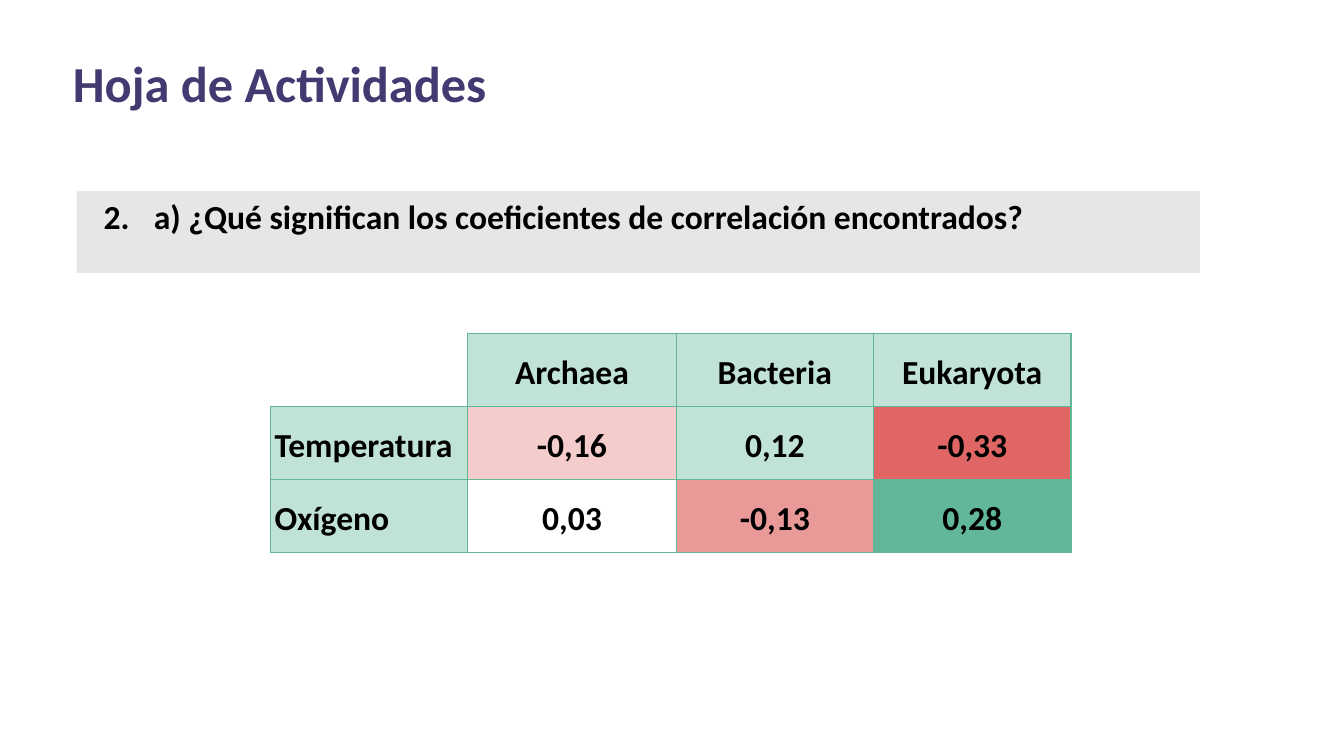
from lxml import etree
from pptx import Presentation
from pptx.dml.color import RGBColor
from pptx.enum.shapes import MSO_SHAPE
from pptx.enum.text import MSO_ANCHOR, MSO_AUTO_SIZE, PP_ALIGN
from pptx.oxml.ns import qn
from pptx.util import Cm, Pt

RECT = MSO_SHAPE.RECTANGLE
TOP, BOTTOM = MSO_ANCHOR.TOP, MSO_ANCHOR.BOTTOM
LEFT, CENTER, JUSTIFY = PP_ALIGN.LEFT, PP_ALIGN.CENTER, PP_ALIGN.JUSTIFY
GROW = MSO_AUTO_SIZE.SHAPE_TO_FIT_TEXT

FONT = "Calibri"
BLACK, WHITE, PURPLE, GREY = "000000", "FFFFFF", "423B71", "E7E6E6"
MINT, GREEN = "C0E2D7", "62B799"
PINK, ROSE, RED = "F4CCCC", "EA9999", "E06666"

COLUMN_WIDTHS = [3.73, 3.94, 3.73, 3.73]
CORRELATIONS = [
    [("", None), ("Archaea", MINT), ("Bacteria", MINT), ("Eukaryota", MINT)],
    [("Temperatura", MINT), ("-0,16", PINK), ("0,12", MINT), ("-0,33", RED)],
    [("Oxígeno", MINT), ("0,03", None), ("-0,13", ROSE), ("0,28", GREEN)],
]


def rgb(value):
    return RGBColor.from_string(value)


def add_run(p, text, size, color):
    r = p.add_run()
    r.text = text
    r.font.name = FONT
    r.font.size = Pt(size)
    r.font.bold = True
    r.font.color.rgb = rgb(color)


def set_frame(tf):
    tf.word_wrap = True
    tf.vertical_anchor = TOP
    tf.margin_left = tf.margin_right = Cm(0.19)
    tf.margin_top = tf.margin_bottom = Cm(0.1)


def number_paragraph(p, start, margin, indent):
    pPr = p._p.get_or_add_pPr()
    pPr.set("marL", str(Cm(margin)))
    pPr.set("indent", str(Cm(indent)))
    color = etree.SubElement(pPr, qn("a:buClr"))
    etree.SubElement(color, qn("a:srgbClr"), val=BLACK)
    etree.SubElement(pPr, qn("a:buFont"), typeface=FONT)
    etree.SubElement(pPr, qn("a:buAutoNum"), type="arabicPeriod", startAt=str(start))


def set_borders(cell, outer):
    tcPr = cell._tc.get_or_add_tcPr()
    sides = {"a:lnL": outer, "a:lnR": GREEN, "a:lnT": outer, "a:lnB": GREEN}
    for i, (tag, color) in enumerate(sides.items()):
        ln = etree.Element(qn(tag), w=str(Pt(0.75)))
        fill = etree.SubElement(ln, qn("a:solidFill"))
        etree.SubElement(fill, qn("a:srgbClr"), val=color)
        tcPr.insert(i, ln)


def add_title(s, x, y, w, h):
    sp = s.shapes.add_textbox(Cm(x), Cm(y), Cm(w), Cm(h))
    tf = sp.text_frame
    set_frame(tf)
    tf.auto_size = GROW
    add_run(tf.paragraphs[0], "Hoja de Actividades", 27, PURPLE)


def add_question(s, x, y, w, h):
    sp = s.shapes.add_shape(RECT, Cm(x), Cm(y), Cm(w), Cm(h))
    sp.shadow.inherit = False
    sp.fill.solid()
    sp.fill.fore_color.rgb = rgb(GREY)
    sp.line.fill.background()
    set_frame(sp.text_frame)
    p = sp.text_frame.paragraphs[0]
    p.alignment = JUSTIFY
    p.space_after = Pt(10)
    number_paragraph(p, 2, 1.27, -0.95)
    add_run(p, "a) ¿Qué significan los coeficientes de correlación encontrados?", 18, BLACK)


def add_correlations(s, x, y, w, h):
    rows, cols = len(CORRELATIONS), len(COLUMN_WIDTHS)
    table = s.shapes.add_table(rows, cols, Cm(x), Cm(y), Cm(w), Cm(h)).table
    table.first_row = table.horz_banding = False
    for column, width in zip(table.columns, COLUMN_WIDTHS):
        column.width = Cm(width)
    for i, row in enumerate(CORRELATIONS):
        for j, (text, color) in enumerate(row):
            cell = table.cell(i, j)
            cell.vertical_anchor = BOTTOM
            cell.margin_left = cell.margin_right = Cm(0.08)
            cell.margin_top = cell.margin_bottom = Cm(0.25)
            if color:
                cell.fill.solid()
                cell.fill.fore_color.rgb = rgb(color)
            else:
                cell.fill.background()
            set_borders(cell, GREEN if text else WHITE)
            if text:
                p = cell.text_frame.paragraphs[0]
                p.alignment = CENTER if j else LEFT
                p.line_spacing = 1.15
                add_run(p, text, 18, BLACK)


def main():
    prs = Presentation()
    prs.slide_width, prs.slide_height = Cm(25.4), Cm(14.29)
    s = prs.slides.add_slide(prs.slide_layouts[6])
    add_title(s, 1.19, 0.89, 20, 1.35)
    add_question(s, 1.45, 3.61, 21.23, 1.55)
    add_correlations(s, 5.11, 6.3, sum(COLUMN_WIDTHS), 4.14)
    prs.save("out.pptx")


if __name__ == "__main__":
    main()
